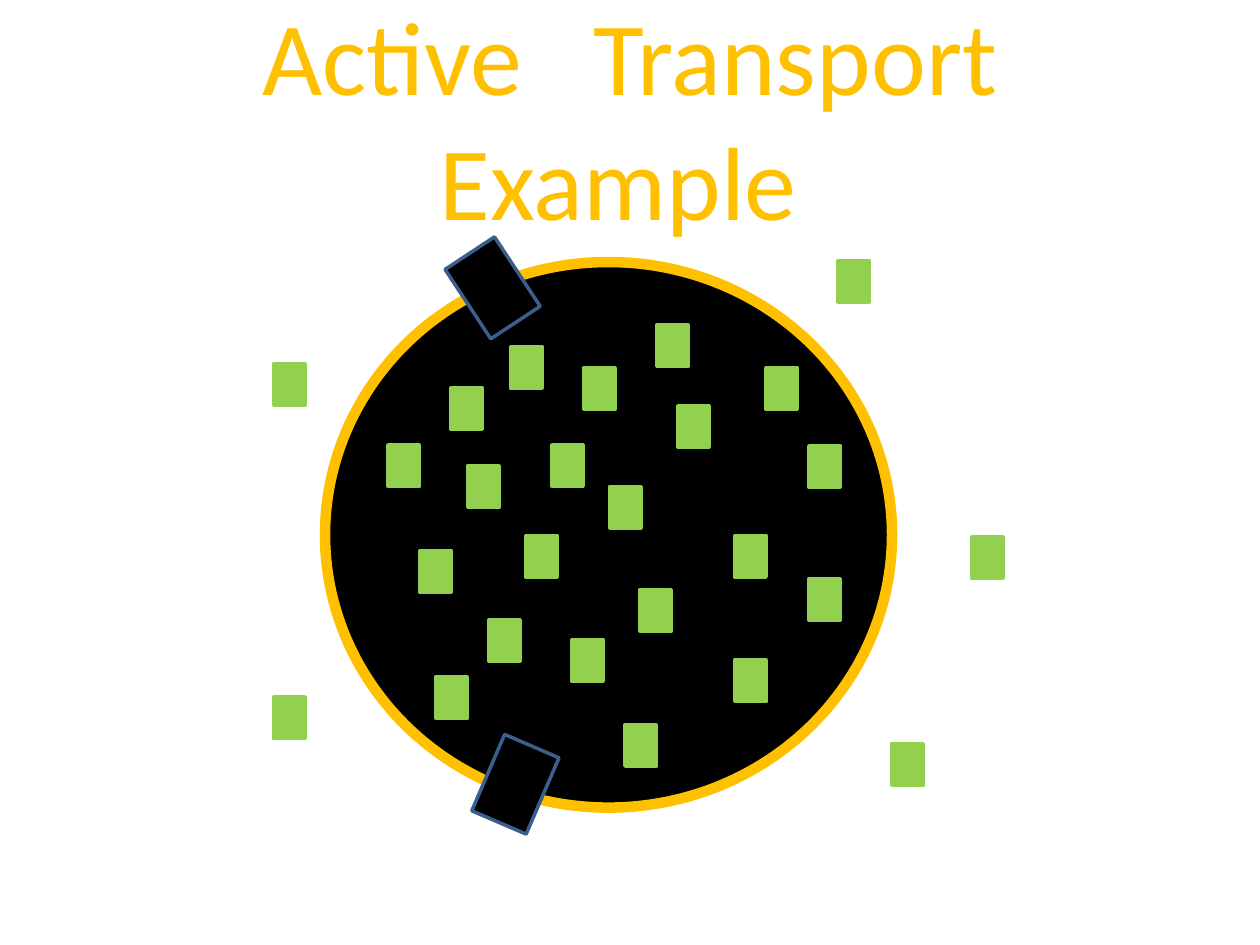
from dataclasses import dataclass

from pptx import Presentation
from pptx.dml.color import RGBColor
from pptx.enum.shapes import MSO_SHAPE as Preset
from pptx.enum.text import MSO_ANCHOR, MSO_AUTO_SIZE, PP_ALIGN
from pptx.util import Inches, Pt


@dataclass(frozen=True)
class Theme:
    font: str = "Calibri"
    title_size: float = 59.4
    word_gap: float = 27
    gold: str = "FFC000"
    black: str = "000000"
    green: str = "92D050"
    blue: str = "3A5F8C"
    white: str = "FFFFFF"
    membrane_width: float = 6
    outline_width: float = 2


THEME = Theme()
TITLE_BOX = (0.5, 0.3, 9, 1.25)
CELL_BOX = (2.58, 2.08, 4.5, 4.33)
MOLECULE_SIZE = (0.25, 0.33)
PROTEIN_SIZE = (0.66, 0.47)

# Offsets from the top left corner of the cell's box
INNER_MOLECULES = [
    (1, 1), (1.8, 1.45), (0.5, 1.45), (1.47, 0.67), (1.59, 2.17),
    (2.26, 1.78), (0.75, 2.29), (2.05, 0.84), (1.96, 3), (3.25, 2.17),
    (2.8, 1.14), (2.5, 2.6), (2.63, 0.5), (0.88, 3.29), (3.84, 1.46),
    (2.38, 3.67), (3.25, 3.16), (1.3, 2.84), (1.13, 1.62), (3.5, 0.84),
    (3.84, 2.51),
]
OUTER_MOLECULES = [
    (4.07, -0.01), (5.13, 2.18), (4.5, 3.82), (-0.41, 3.45), (-0.41, 0.81),
]
PROTEINS = [(1, -0.03, 56.6), (1.18, 3.91, 113.3)]


def set_attributes(target, values):
    for name, value in values.items():
        setattr(target, name, value)


def add_filled_shape(slide, preset, box, fill, line, line_width, rotation=0):
    shape = slide.shapes.add_shape(preset, *map(Inches, box))
    shape.shadow.inherit = False
    shape.rotation = rotation
    shape.fill.solid()
    shape.fill.fore_color.rgb = RGBColor.from_string(fill)
    shape.line.color.rgb = RGBColor.from_string(line)
    shape.line.width = Pt(line_width)


def add_title(slide, box):
    """Fill the title placeholder, widening the gap after its first word."""
    title = slide.shapes.title
    left, top, width, height = map(Inches, box)
    set_attributes(title, dict(left=left, top=top, width=width, height=height))
    frame = title.text_frame
    set_attributes(frame, dict(
        word_wrap=True, auto_size=MSO_AUTO_SIZE.NONE,
        vertical_anchor=MSO_ANCHOR.MIDDLE,
        margin_left=Inches(0.3), margin_right=Inches(0.3)))
    paragraph = frame.paragraphs[0]
    paragraph.alignment = PP_ALIGN.CENTER
    for text, spacing in (("Active", 0), (" ", THEME.word_gap),
                          ("Transport Example ", 0)):
        run = paragraph.add_run()
        run.text = text
        set_attributes(run.font, dict(name=THEME.font, size=Pt(THEME.title_size)))
        run.font.color.rgb = RGBColor.from_string(THEME.gold)
        if spacing:
            run._r.get_or_add_rPr().set("spc", str(round(spacing * 100)))


def add_cell(slide, box):
    """Draw the cell, the molecules in and around it, and its proteins."""
    left, top = box[:2]
    add_filled_shape(slide, Preset.OVAL, box, THEME.black, THEME.gold,
                     THEME.membrane_width)
    for x, y in INNER_MOLECULES + OUTER_MOLECULES:
        add_filled_shape(slide, Preset.RECTANGLE,
                         (left + x, top + y, *MOLECULE_SIZE),
                         THEME.green, THEME.green, THEME.outline_width)
    for x, y, rotation in PROTEINS:
        add_filled_shape(slide, Preset.RECTANGLE,
                         (left + x, top + y, *PROTEIN_SIZE),
                         THEME.black, THEME.blue, THEME.outline_width, rotation)


def main():
    presentation = Presentation()
    presentation.slide_width = Inches(10)
    presentation.slide_height = Inches(7.5)
    slide = presentation.slides.add_slide(
        presentation.slide_layouts.get_by_name("Title Only"))
    slide.background.fill.solid()
    slide.background.fill.fore_color.rgb = RGBColor.from_string(THEME.white)
    add_title(slide, TITLE_BOX)
    add_cell(slide, CELL_BOX)
    presentation.save("out.pptx")


if __name__ == "__main__":
    main()
